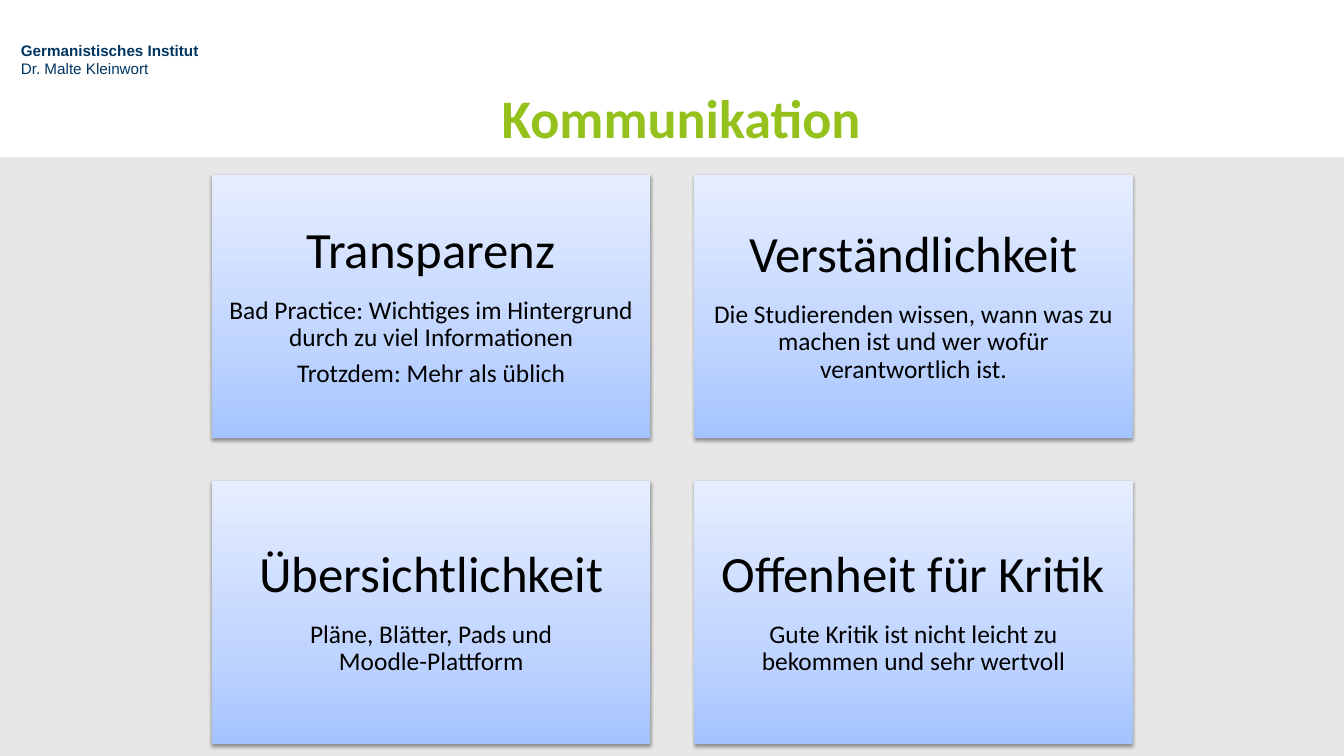
from pptx import Presentation
from pptx.dml.color import RGBColor
from pptx.enum.shapes import MSO_SHAPE
from pptx.enum.text import MSO_ANCHOR, PP_ALIGN
from pptx.oxml import parse_xml
from pptx.oxml.ns import nsdecls, qn
from pptx.util import Cm, Pt


def color(code):
    """Turn a hex string into a colour."""
    return RGBColor.from_string(code)


class Deck:
    """Hold the style and the current slide."""

    sans, head = "Calibri", "Arial"
    green, navy, black, white, gray = "94C11C", "003560", "000000", "FFFFFF", "E7E7E7"
    stops = ((0, "A4C4FF"), (35, "BFD4FF"), (100, "E6EEFF"))

    def __init__(self, wide, high):
        """Start a deck with one grey slide."""
        self.show = Presentation()
        self.show.slide_width, self.show.slide_height = Cm(wide), Cm(high)
        self.slide = self.show.slides.add_slide(self.show.slide_layouts[5])
        fill = self.slide.background.fill
        fill.solid()
        fill.fore_color.rgb = color(self.gray)

    def run(self, par, text, size, face, tint, bold=False):
        """Add one styled run."""
        run = par.add_run()
        run.text = text
        font = run.font
        font.size, font.name, font.bold = Pt(size), face, bold
        font.color.rgb = color(tint)

    def frame(self, shape, inset):
        """Set wrapping and equal insets, and return the text frame."""
        frame = shape.text_frame
        frame.word_wrap = True
        frame.margin_left = frame.margin_right = Cm(inset)
        frame.margin_top = frame.margin_bottom = Cm(inset)
        return frame

    def rect(self, x, y, wide, high):
        """Add a rectangle without outline or shadow."""
        rect = self.slide.shapes.add_shape(
            MSO_SHAPE.RECTANGLE, Cm(x), Cm(y), Cm(wide), Cm(high))
        rect.shadow.inherit = False
        rect.line.fill.background()
        return rect

    def band(self, wide, high):
        """Add the white band at the top."""
        fill = self.rect(0, 0, wide, high).fill
        fill.solid()
        fill.fore_color.rgb = color(self.white)

    def label(self, x, y, wide, high, name, person):
        """Add the sender label."""
        box = self.slide.shapes.add_textbox(Cm(x), Cm(y), Cm(wide), Cm(high))
        par = self.frame(box, 0).paragraphs[0]
        self.run(par, name, 12, self.head, self.navy, True)
        par.add_line_break()
        self.run(par, person, 12, self.head, self.navy)

    def title(self, x, y, wide, high, text):
        """Move the title placeholder to the front and fill it."""
        title = self.slide.shapes.title
        title.element.getparent().append(title.element)
        title.left, title.top, title.width, title.height = map(Cm, (x, y, wide, high))
        frame = title.text_frame
        frame.vertical_anchor = MSO_ANCHOR.MIDDLE
        par = frame.paragraphs[0]
        par.alignment = PP_ALIGN.CENTER
        self.run(par, text, 42.7, self.sans, self.green, True)

    def shade(self, shape):
        """Give a shape the blue gradient and a soft shadow."""
        shape.fill.gradient()
        shape.fill.gradient_angle = 90
        props = shape.element.spPr
        ramp = props.find(qn("a:gradFill")).find(qn("a:gsLst"))
        ramp.clear()
        for spot, tint in self.stops:
            ramp.append(parse_xml(
                f'<a:gs {nsdecls("a")} pos="{spot * 1000}"><a:srgbClr val="{tint}"/></a:gs>'))
        props.find(qn("a:effectLst")).append(parse_xml(
            f'<a:outerShdw {nsdecls("a")} blurRad="40000" dist="20000" dir="5400000" '
            f'rotWithShape="0"><a:srgbClr val="{self.black}"><a:alpha val="38000"/>'
            '</a:srgbClr></a:outerShdw>'))

    def card(self, x, y, wide, high, texts):
        """Add a card with a heading and its notes."""
        card = self.rect(x, y, wide, high)
        self.shade(card)
        frame = self.frame(card, 0.43)
        frame.vertical_anchor = MSO_ANCHOR.MIDDLE
        for i, text in enumerate(texts):
            par = frame.add_paragraph() if i else frame.paragraphs[0]
            size = 20 if i else 40
            par.alignment = PP_ALIGN.CENTER
            par.line_spacing = 0.9
            par.space_after = Pt(0.35 * size)
            for j, line in enumerate(text.split("\n")):
                if j:
                    par.add_line_break()
                self.run(par, line, size, self.sans, self.black)


def main():
    """Build the slide and save it."""
    deck = Deck(37.34, 21)
    deck.band(37.34, 4.37)
    deck.label(0.58, 1.14, 7.24, 1.6, "Germanistisches Institut", "Dr. Malte Kleinwort")
    deck.title(0.53, 2.21, 36.8, 2.08, "Kommunikation")
    cards = (
        ("Transparenz",
         "Bad Practice: Wichtiges im Hintergrund durch zu viel Informationen",
         "Trotzdem: Mehr als üblich"),
        ("Verständlichkeit",
         "Die Studierenden wissen, wann was zu machen ist und wer wofür verantwortlich ist."),
        ("Übersichtlichkeit", "Pläne, Blätter, Pads und\nMoodle-Plattform"),
        ("Offenheit für Kritik",
         "Gute Kritik ist nicht leicht zu bekommen und sehr wertvoll"),
    )
    for i, texts in enumerate(cards):
        row, col = divmod(i, 2)
        deck.card(5.89 + 13.4 * col, 4.85 + 8.51 * row, 12.18, 7.32, texts)
    deck.show.save("out.pptx")


if __name__ == "__main__":
    main()
